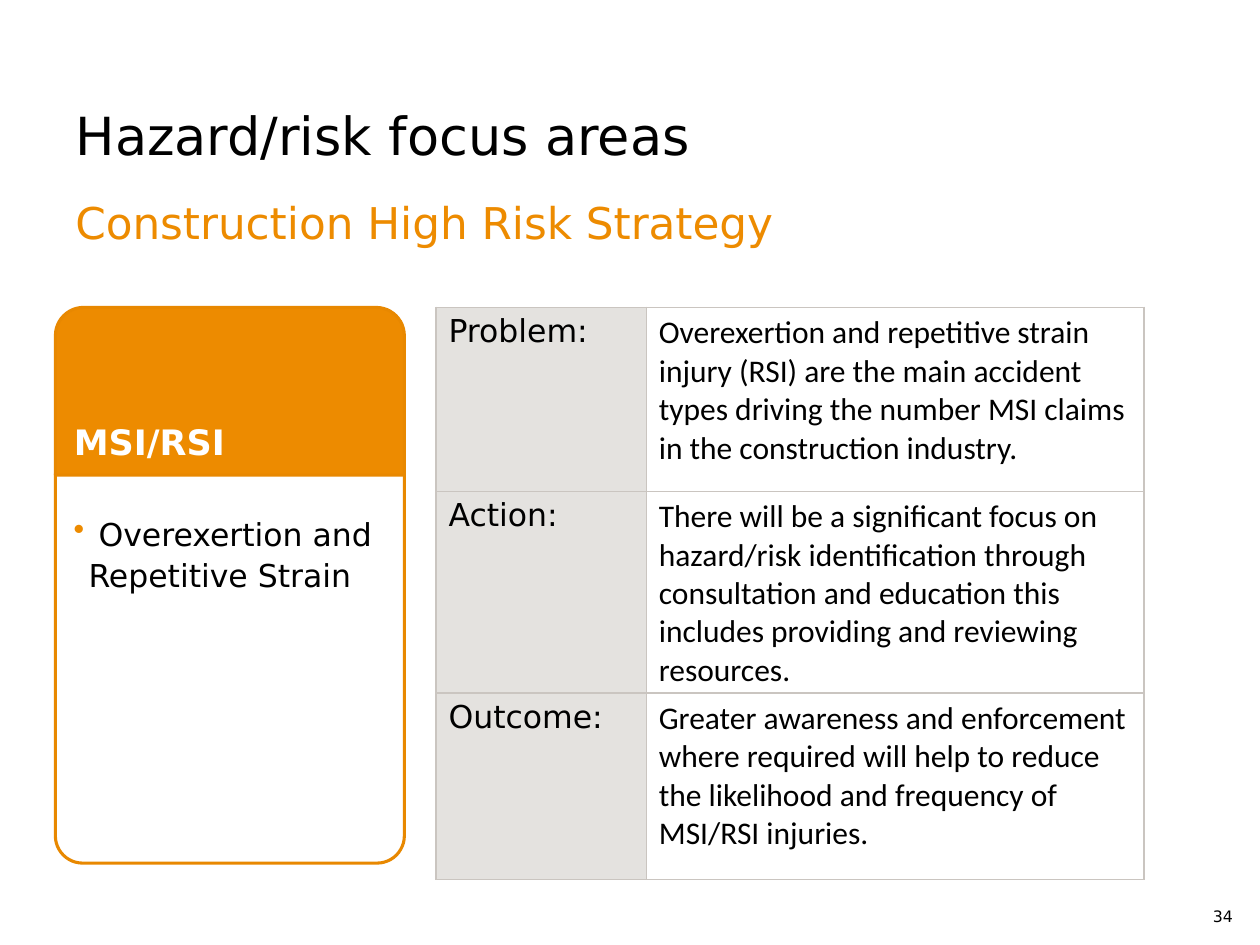
"""Build the construction hazard and risk focus slide."""
from lxml.etree import SubElement
from pptx import Presentation
from pptx.dml.color import RGBColor
from pptx.enum.shapes import MSO_SHAPE
from pptx.enum.text import MSO_ANCHOR, PP_ALIGN
from pptx.oxml.ns import qn
from pptx.util import Pt

COLORS = {
    "ink": "000000",
    "paper": "FFFFFF",
    "orange": "ED8B00",
    "outline": "E88800",
    "label": "E4E2DF",
    "rule": "CAC5C0",
}
SANS = "DejaVu Sans"
BODY = "Calibri"
PLAN = [
    ("Problem:", "Overexertion and repetitive strain injury (RSI) are the main accident "
                 "types driving the number MSI claims in the construction industry."),
    ("Action:", "There will be a significant focus on hazard/risk identification through "
                "consultation and education this includes providing and reviewing resources."),
    ("Outcome:", "Greater awareness and enforcement where required will help to reduce "
                 "the likelihood and frequency of MSI/RSI injuries."),
]
COLUMN_WIDTHS = (120.2, 284.4)
ROW_HEIGHTS = (105.1, 106.6, 106.6)


def color(name):
    return RGBColor.from_string(COLORS[name])


def add_run(paragraph, text, size, ink="ink", face=SANS, bold=False):
    run = paragraph.add_run()
    run.text = text
    run.font.size = Pt(size)
    run.font.name = face
    run.font.bold = bold
    run.font.color.rgb = color(ink)


def set_frame(frame, anchor, left=7.2, top=3.6, right=7.2, bottom=3.6):
    frame.word_wrap = True
    frame.vertical_anchor = anchor
    frame.margin_left, frame.margin_top = Pt(left), Pt(top)
    frame.margin_right, frame.margin_bottom = Pt(right), Pt(bottom)


def add_title(slide, text):
    title = slide.shapes.title
    title.left, title.top, title.width, title.height = Pt(36), Pt(54), Pt(653), Pt(46)
    set_frame(title.text_frame, MSO_ANCHOR.MIDDLE)
    heading = title.text_frame.paragraphs[0]
    heading.alignment = PP_ALIGN.LEFT
    add_run(heading, text, 30)


def add_label(slide, box, text, size, ink, anchor, align, top=3.6):
    label = slide.shapes.add_textbox(*map(Pt, box))
    set_frame(label.text_frame, anchor, top=top)
    paragraph = label.text_frame.paragraphs[0]
    paragraph.alignment = align
    add_run(paragraph, text, size, ink)
    return paragraph


def add_panel(slide, preset, box, corners, fill):
    panel = slide.shapes.add_shape(preset, *map(Pt, box))
    for index, corner in enumerate(corners):
        panel.adjustments[index] = corner
    panel.shadow.inherit = False
    panel.fill.solid()
    panel.fill.fore_color.rgb = color(fill)
    panel.line.color.rgb = color("outline")
    panel.line.width = Pt(1.75)
    panel.text_frame.paragraphs[0].alignment = PP_ALIGN.LEFT
    return panel.text_frame


def set_bullet(paragraph, mark, ink, indent):
    properties = paragraph._p.get_or_add_pPr()
    properties.set("marL", str(Pt(indent)))
    properties.set("indent", str(Pt(-indent)))
    bullet_color = SubElement(properties, qn("a:buClr"))
    SubElement(bullet_color, qn("a:srgbClr"), val=COLORS[ink])
    SubElement(properties, qn("a:buChar"), char=mark)


def add_hazard_card(slide):
    details = add_panel(slide, MSO_SHAPE.ROUNDED_RECTANGLE, (31.7, 256.3, 199.4, 236.9),
                        (0.078,), "paper")
    set_frame(details, MSO_ANCHOR.TOP, 5.8, 31, 5.8)
    item = details.paragraphs[0]
    set_bullet(item, "•", "orange", 8.6)
    item.line_spacing = 1.1
    add_run(item, " Overexertion and Repetitive Strain", 18)

    header = add_panel(slide, MSO_SHAPE.ROUND_2_SAME_RECTANGLE, (31.7, 175.7, 199.4, 95.8),
                       (0.168, 0), "orange")
    set_frame(header, MSO_ANCHOR.BOTTOM, 5.8, 3.6, 5.8, 7.2)
    header.paragraphs[0].space_after = Pt(6)
    add_run(header.paragraphs[0], "MSI/RSI", 20, "paper", bold=True)


def set_borders(cell):
    properties = cell._tc.get_or_add_tcPr()
    for position, side in enumerate(("lnL", "lnR", "lnT", "lnB")):
        border = SubElement(properties, qn(f"a:{side}"), w=str(Pt(1)))
        fill = SubElement(border, qn("a:solidFill"))
        SubElement(fill, qn("a:srgbClr"), val=COLORS["rule"])
        properties.insert(position, border)


def add_plan_table(slide):
    table = slide.shapes.add_table(
        len(PLAN), len(COLUMN_WIDTHS), Pt(249.1), Pt(175.7),
        Pt(sum(COLUMN_WIDTHS)), Pt(sum(ROW_HEIGHTS))).table
    table.first_row = table.horz_banding = False
    for column, width in zip(table.columns, COLUMN_WIDTHS):
        column.width = Pt(width)
    for row, height, texts in zip(table.rows, ROW_HEIGHTS, PLAN):
        row.height = Pt(height)
        for cell, text, face, fill in zip(row.cells, texts, (SANS, BODY), ("label", "paper")):
            cell.fill.solid()
            cell.fill.fore_color.rgb = color(fill)
            set_borders(cell)
            add_run(cell.text_frame.paragraphs[0], text, 18, face=face)


def main():
    deck = Presentation()
    deck.slide_width, deck.slide_height = Pt(720), Pt(540)
    slide = deck.slides.add_slide(deck.slide_layouts[5])
    add_title(slide, "Hazard/risk focus areas")
    subtitle = add_label(slide, (36, 100, 653, 57), "Construction High Risk Strategy", 25,
                         "orange", MSO_ANCHOR.TOP, PP_ALIGN.LEFT, top=5.8)
    subtitle.line_spacing = 1.2
    add_label(slide, (680.4, 509, 36.7, 28.8), "34", 9, "ink",
              MSO_ANCHOR.MIDDLE, PP_ALIGN.CENTER)
    add_plan_table(slide)
    add_hazard_card(slide)
    deck.save("out.pptx")


if __name__ == "__main__":
    main()
